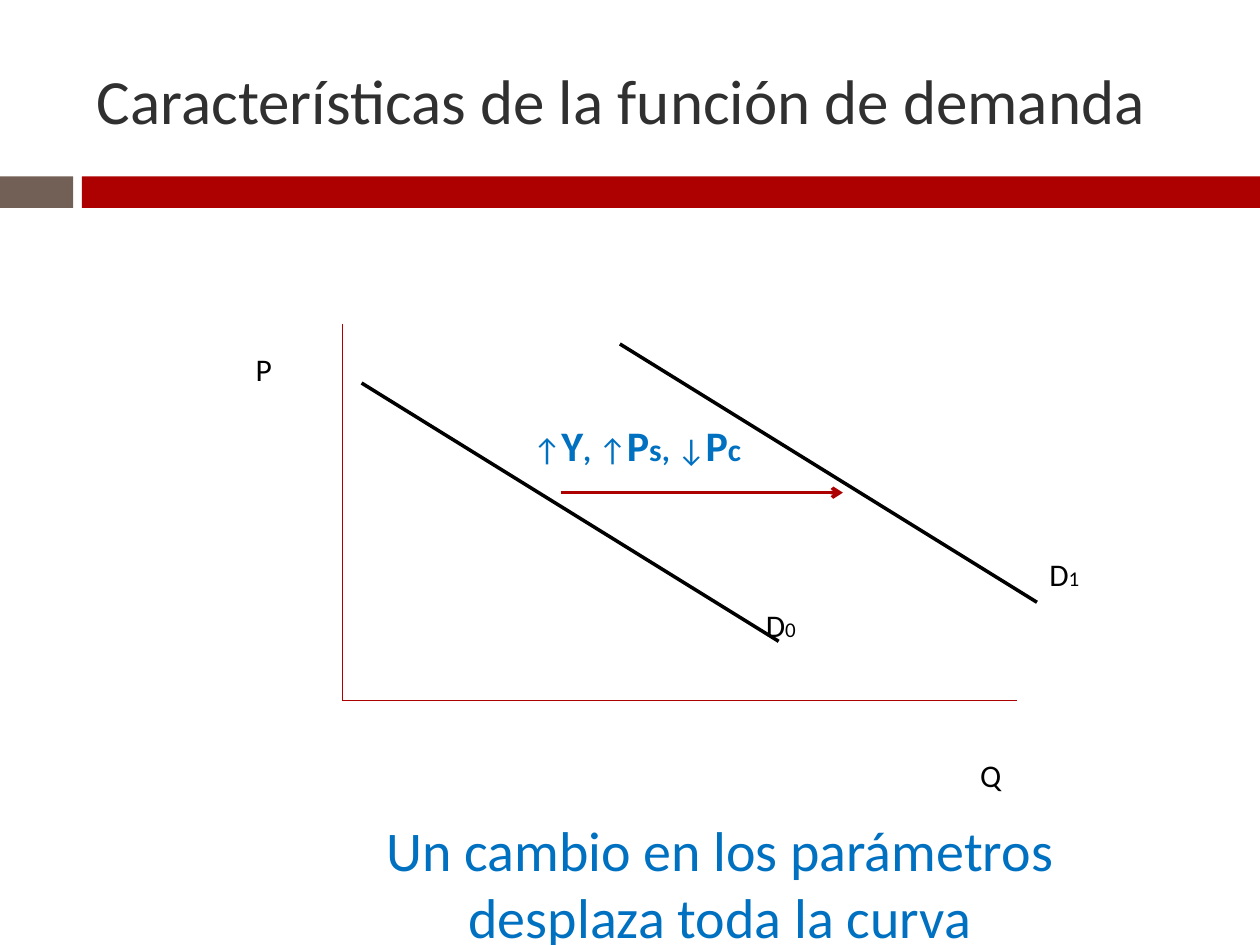
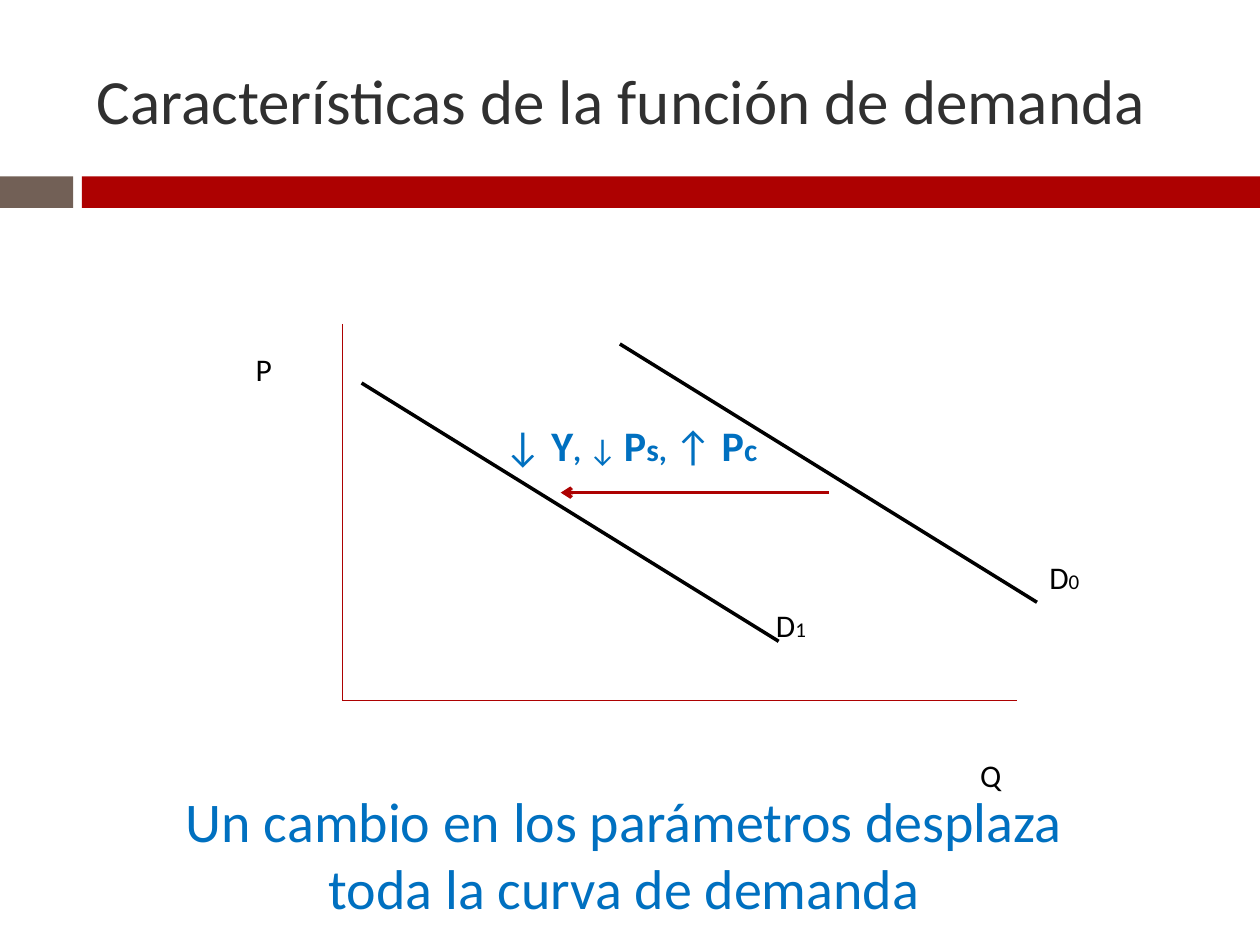
import pptx
import pptx.dml.color
import pptx.enum.shapes
import pptx.enum.text
import pptx.oxml.ns
import pptx.util
from lxml import etree

PX = 9144
FONT = "Calibri"
RED, TAUPE, CHARCOAL = "AD0101", "726056", "303030"
BLACK, BLUE, WHITE = "000000", "0070C0", "FFFFFF"
TITLE = "Características de la función de demanda"
TITLE_BOX = (67, 25, 892, 108)
BAND_BOX = (0, 140, 1000, 25)
PLOT_BOX = (272, 257, 535, 299)
CURVE_RUN, CURVE_DROP = 331, 205
LEFT_CURVE, RIGHT_CURVE = (15, 47), (220, 16)
ARROW_Y = 134


def color(hex_string):
    return pptx.dml.color.RGBColor.from_string(hex_string)


def emu(*lengths):
    return [pptx.util.Emu(length * PX) for length in lengths]


def add_text(slide, box, pieces, hex_color, wrap=True, centered=False, grow=True):
    box_shape = slide.shapes.add_textbox(*emu(*box))
    frame = box_shape.text_frame
    frame.word_wrap = wrap
    if grow:
        frame.auto_size = pptx.enum.text.MSO_AUTO_SIZE.SHAPE_TO_FIT_TEXT
    else:
        frame.vertical_anchor = pptx.enum.text.MSO_ANCHOR.MIDDLE
    paragraph = frame.paragraphs[0]
    if centered:
        paragraph.alignment = pptx.enum.text.PP_ALIGN.CENTER
    for text, size, bold in pieces:
        run = paragraph.add_run()
        run.text = text
        run.font.name = FONT
        run.font.size = pptx.util.Pt(size)
        run.font.bold = bold
        run.font.color.rgb = color(hex_color)


def add_line(slide, start, end, hex_color, width, arrow=False):
    line = slide.shapes.add_connector(
        pptx.enum.shapes.MSO_CONNECTOR.STRAIGHT, *emu(*start, *end))
    line.line.color.rgb = color(hex_color)
    line.line.width = pptx.util.Pt(width)
    if arrow:
        etree.SubElement(line.line._get_or_add_ln(),
                         pptx.oxml.ns.qn("a:tailEnd"), type="arrow")
    etree.SubElement(line._element.spPr, pptx.oxml.ns.qn("a:effectLst"))


def add_header(slide):
    add_text(slide, TITLE_BOX, [(TITLE, 36, False)], CHARCOAL, grow=False)
    left, top, width, height = BAND_BOX
    tab_width, red_start = 58, 65
    for start, end, fill in ((0, tab_width, TAUPE), (red_start, width, RED)):
        band = slide.shapes.add_shape(
            pptx.enum.shapes.MSO_SHAPE.RECTANGLE,
            *emu(left + start, top, end - start, height))
        band.shadow.inherit = False
        band.fill.solid()
        band.fill.fore_color.rgb = color(fill)
        band.line.fill.background()


def add_demand_plot(slide, box, curve_labels, shift, parameters, parameters_x):
    left, top, width, height = box

    def at(x, y):
        return left + x, top + y

    add_line(slide, at(0, 0), at(0, height), RED, 0.79)
    add_line(slide, at(0, height), at(width, height), RED, 0.79)
    for x, y in (LEFT_CURVE, RIGHT_CURVE):
        add_line(slide, at(x, y), at(x + CURVE_RUN, y + CURVE_DROP), BLACK, 2)
    for subscript, x, y in curve_labels:
        add_text(slide, (*at(x, y), 46, 40),
                 [("D", 18, False), (subscript, 12, False)], BLACK, wrap=False)
    add_text(slide, (*at(-79, 16), 79, 40), [("P", 18, False)], BLACK)
    add_text(slide, (*at(width - 39, height + 39), 110, 40), [("Q", 18, False)], BLACK)
    shift_start, shift_end = shift
    add_line(slide, at(shift_start, ARROW_Y), at(shift_end, ARROW_Y), RED, 2, arrow=True)
    add_text(slide, (*at(parameters_x, 71), 228, 50), parameters, BLUE)


def add_demand_slide(deck, caption, caption_box, **plot):
    slide = deck.slides.add_slide(deck.slide_layouts[6])
    slide.background.fill.solid()
    slide.background.fill.fore_color.rgb = color(WHITE)
    add_header(slide)
    add_demand_plot(slide, PLOT_BOX, **plot)
    add_text(slide, caption_box, [(caption, 32, False)], BLUE, centered=True)


def main():
    deck = pptx.Presentation()
    deck.slide_width, deck.slide_height = emu(1000, 750)
    add_demand_slide(
        deck,
        "Un cambio en los parámetros desplaza toda la curva",
        (281, 642, 581, 118),
        curve_labels=[("0", 326, 219), ("1", 551, 179)],
        shift=(173, 397),
        parameters=[("↑", 18, False), ("Y", 24, True), (", ", 18, True),
                    ("↑", 18, False), ("P", 24, True), ("s, ", 18, True),
                    ("↓", 18, False), ("P", 24, True), ("c", 18, True)],
        parameters_x=141)
    add_demand_slide(
        deck,
        "Un cambio en los parámetros desplaza toda la curva de demanda",
        (98, 619, 795, 118),
        curve_labels=[("1", 334, 219), ("0", 551, 181)],
        shift=(386, 173),
        parameters=[("↓ ", 24, False), ("Y", 24, True), (", ", 18, True),
                    ("↓ ", 18, False), ("P", 24, True), ("s, ", 18, True),
                    ("↑ ", 24, False), ("P", 24, True), ("c", 18, True)],
        parameters_x=118)
    deck.save("out.pptx")


if __name__ == "__main__":
    main()
